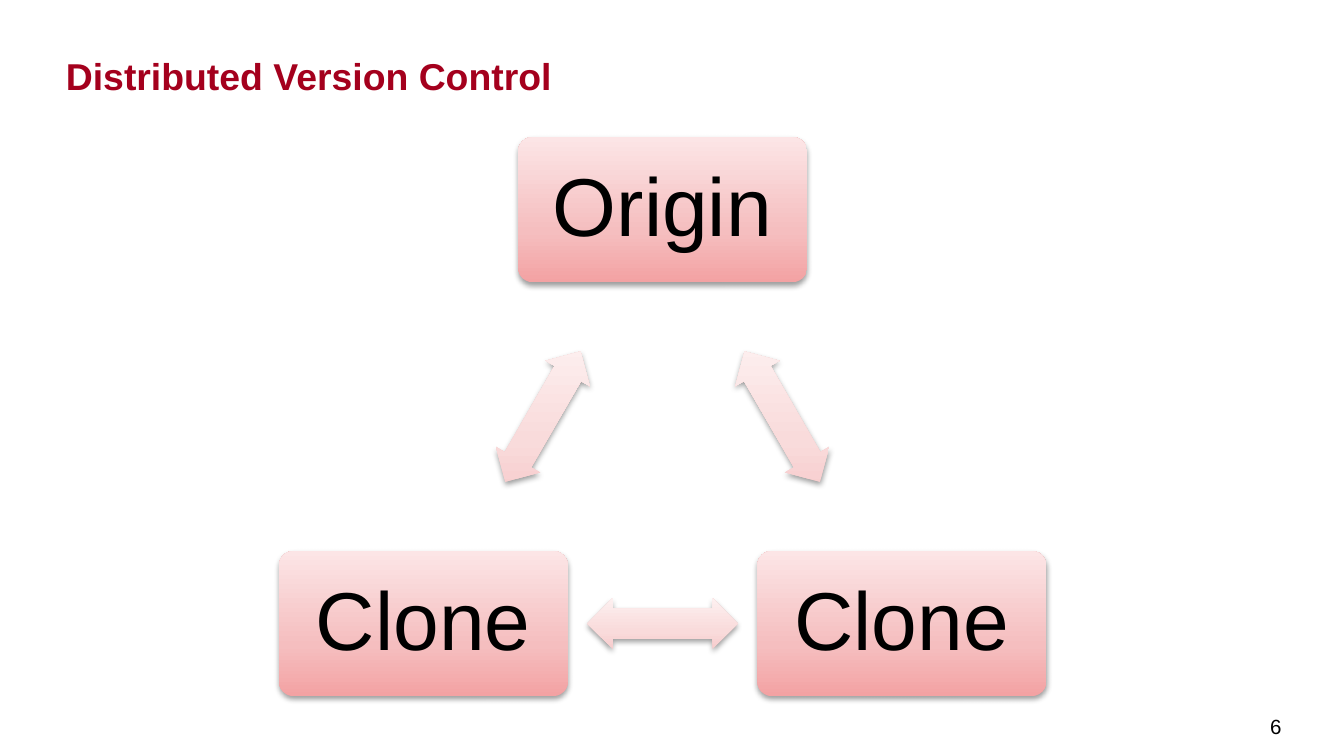
"""Build a slide on distributed version control: an origin and two clones in a triangle."""
import itertools

import pptx
import pptx.dml.color
import pptx.enum.shapes
import pptx.enum.text
import pptx.oxml
import pptx.oxml.ns
import pptx.util

Inches = pptx.util.Inches
Pt = pptx.util.Pt
Shape = pptx.enum.shapes.MSO_SHAPE
Align = pptx.enum.text.PP_ALIGN
Anchor = pptx.enum.text.MSO_ANCHOR

COLORS = {
    "title": "A4001D",
    "text": "000000",
    "shadow": "000000",
    "node": ("F3A2A3", "F5BEBF", "FCE5E6"),
    "arrow": ("F7CCCD", "F9DBDB", "FDF0F0"),
}
STOPS = (0, 35000, 100000)
NODES = (("Origin", 4.93, 1.56), ("Clone", 6.71, 4.64), ("Clone", 3.15, 4.64))
NODE_SIZE = (2.15, 1.08)
ARROW_SIZE = (1.12, 0.38)


def set_values(target, values):
    for name, value in values.items():
        setattr(target, name, value)


def write_text(box, text, color, insets, frame_format, para_format, font_format):
    frame = box.text_frame
    sides = ("margin_left", "margin_top", "margin_right", "margin_bottom")
    set_values(frame, {side: Inches(inset) for side, inset in zip(sides, insets)})
    set_values(frame, {"word_wrap": True, **frame_format})
    para = frame.paragraphs[0]
    set_values(para, para_format)
    span = para.add_run()
    span.text = text
    set_values(span.font, {"name": "Arial", **font_format})
    span.font.color.rgb = pptx.dml.color.RGBColor.from_string(COLORS[color])


def add_glossy_shape(group, kind, center, size, colors, adjustments, rotation=0):
    left, top = (middle - length / 2 for middle, length in zip(center, size))
    shape = group.shapes.add_shape(kind, *map(Inches, (left, top, *size)))
    for index, value in enumerate(adjustments):
        shape.adjustments[index] = value
    shape.rotation = rotation
    shape.line.fill.background()
    namespace = pptx.oxml.ns.nsdecls("a")
    stops = "".join(
        f'<a:gs pos="{position}"><a:srgbClr val="{color}"/></a:gs>'
        for position, color in zip(STOPS, COLORS[colors])
    )
    gradient = (
        f'<a:gradFill {namespace} rotWithShape="0"><a:gsLst>{stops}</a:gsLst>'
        '<a:lin ang="16200000" scaled="0"/></a:gradFill>'
    )
    shadow = (
        f'<a:effectLst {namespace}><a:outerShdw blurRad="40000" dist="20000" '
        f'dir="5400000" rotWithShape="0"><a:srgbClr val="{COLORS["shadow"]}">'
        '<a:alpha val="38000"/></a:srgbClr></a:outerShdw></a:effectLst>'
    )
    properties = shape._element.spPr
    properties.insert(2, pptx.oxml.parse_xml(gradient))
    properties.append(pptx.oxml.parse_xml(shadow))
    return shape


def add_node(group, text, center):
    node = add_glossy_shape(group, Shape.ROUNDED_RECTANGLE, center, NODE_SIZE, "node", (0.1,))
    write_text(
        node, text, "text", (0.21,) * 4,
        {"vertical_anchor": Anchor.MIDDLE},
        {"alignment": Align.CENTER, "line_spacing": 0.9},
        {"size": Pt(44)},
    )


def add_arrow(group, start, end, rotation):
    center = [(first + second) / 2 for first, second in zip(start, end)]
    add_glossy_shape(
        group, Shape.LEFT_RIGHT_ARROW, center, ARROW_SIZE, "arrow", (0.6, 0.5), rotation
    )


def add_title(page, text):
    title = page.shapes.title
    places = zip(("left", "top", "width", "height"), (0.49, 0.11, 8.86, 0.62))
    set_values(title, {name: Inches(value) for name, value in places})
    write_text(
        title, text, "title", (0,) * 4,
        {"vertical_anchor": Anchor.BOTTOM, "auto_size": pptx.enum.text.MSO_AUTO_SIZE.NONE},
        {"alignment": Align.LEFT},
        {"size": Pt(20), "bold": True},
    )


def add_page_number(page, number):
    box = page.shapes.add_textbox(*map(Inches, (9.37, 5.18, 0.35, 0.44)))
    write_text(
        box, number, "text", (0.08, 0.06, 0.08, 0.05),
        {"vertical_anchor": Anchor.MIDDLE}, {}, {"size": Pt(11)},
    )


def add_cycle(page):
    group = page.shapes.add_group_shape()
    ring = itertools.islice(itertools.cycle(NODES), len(NODES) + 1)
    for index, (node, following) in enumerate(itertools.pairwise(ring)):
        text, *center = node
        add_node(group, text, center)
        add_arrow(group, center, following[1:], 60 + 120 * index)


def main():
    deck = pptx.Presentation()
    width = Inches(10)
    set_values(deck, {"slide_width": width, "slide_height": width * 9 // 16})
    page = deck.slides.add_slide(deck.slide_layouts[5])
    add_page_number(page, "6")
    add_title(page, "Distributed Version Control")
    add_cycle(page)
    deck.save("out.pptx")


if __name__ == "__main__":
    main()
